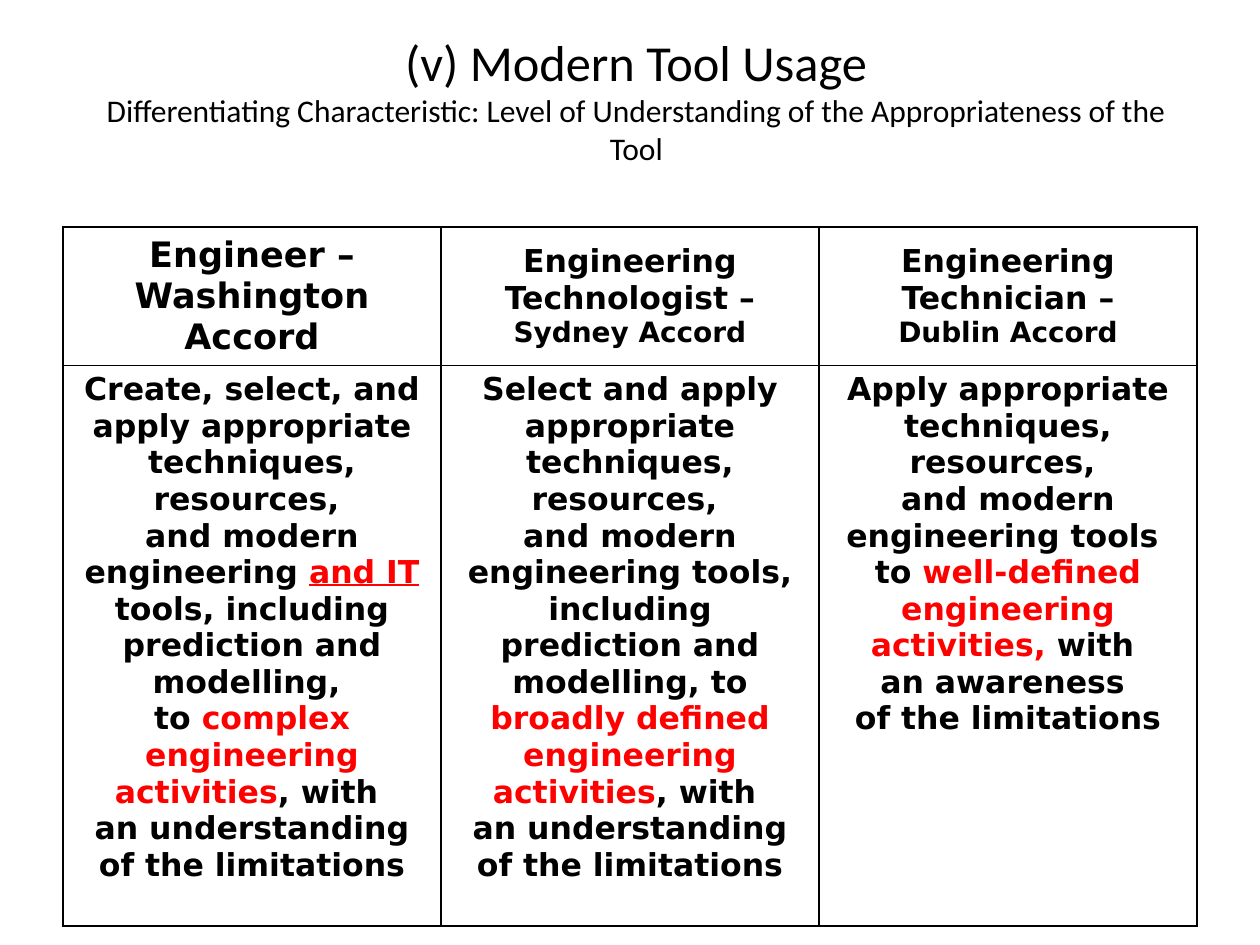
import copy
import dataclasses

import pptx
import pptx.dml.color
import pptx.enum.text
import pptx.oxml
import pptx.oxml.ns
import pptx.util


@dataclasses.dataclass(frozen=True)
class Theme:
    """Colours, fonts and type sizes of the slide."""
    ink: str = "000000"
    accent: str = "FF0000"
    paper: str = "FFFFFF"
    title_font: str = "Calibri"
    table_font: str = "DejaVu Sans"
    title: float = 28.8
    large: float = 20
    body: float = 18
    small: float = 16
    border: float = 1


THEME = Theme()
WIDTH, HEIGHT = 10, 7.5
ROWS = (1.1, 4.45)
COLUMNS = 3
ANCHOR = pptx.enum.text.MSO_ANCHOR

HEADERS = (
    (("Engineer –", THEME.large), ("Washington Accord", THEME.large)),
    (("Engineering Technologist –", THEME.body), ("Sydney Accord", THEME.small)),
    (("Engineering Technician –", THEME.body), ("Dublin Accord", THEME.small)),
)
ACCENT = {"color": THEME.accent}
OUTCOMES = (
    (
        ("Create, select, and apply appropriate techniques, resources, \nand modern engineering ", {}),
        ("and IT", {"color": THEME.accent, "underline": True}),
        (" tools, including prediction and modelling, \nto ", {}),
        ("complex engineering activities", ACCENT),
        (", with \nan understanding of the limitations", {}),
    ),
    (
        ("Select and apply appropriate techniques, resources, \nand modern engineering tools, "
         "including prediction and modelling, to ", {}),
        ("broadly defined engineering activities", ACCENT),
        (", with \nan understanding of the limitations", {}),
    ),
    (
        ("Apply appropriate techniques, resources, \nand modern engineering tools \nto ", {}),
        ("well-defined engineering activities, ", ACCENT),
        ("with \nan awareness \nof the limitations", {}),
    ),
)


def add_text(p, text, size, font, bold=False, color=THEME.ink, underline=None):
    """Add styled text to a centred paragraph, with line breaks of the same size."""
    p.alignment = pptx.enum.text.PP_ALIGN.CENTER
    for i, line in enumerate(text.split("\n")):
        if i:
            p.add_line_break()
            p._p[-1].append(copy.deepcopy(r._r.rPr))
        if line:
            r = p.add_run()
            r.text = line
            r.font.name = font
            r.font.size = pptx.util.Pt(size)
            r.font.bold = bold
            r.font.underline = underline
            r.font.color.rgb = pptx.dml.color.RGBColor.from_string(color)


def add_title(s):
    """Fill the title placeholder with the heading and its subtitle."""
    sp = s.shapes.title
    sp.left, sp.width = (pptx.util.Inches(WIDTH * share) for share in (0.055, 0.9))
    sp.top, sp.height = pptx.util.Inches(0.16), pptx.util.Inches(HEIGHT / 6)
    tf = sp.text_frame
    tf.word_wrap = True
    tf.auto_size = pptx.enum.text.MSO_AUTO_SIZE.NONE
    tf.vertical_anchor = ANCHOR.MIDDLE
    p = tf.paragraphs[0]
    add_text(p, "(v) Modern Tool Usage\n", THEME.title, THEME.title_font)
    add_text(p, "Differentiating Characteristic: Level of Understanding of the "
                "Appropriateness of the Tool", THEME.body, THEME.title_font)


def format_cell(cell, anchor):
    """Give a cell its borders, fill and vertical anchor."""
    cell.vertical_anchor = anchor
    tc_pr = cell._tc.get_or_add_tcPr()
    for side in "LRTB":
        tc_pr.append(pptx.oxml.parse_xml(
            f'<a:ln{side} {pptx.oxml.ns.nsdecls("a")} w="{pptx.util.Pt(THEME.border)}">'
            f'<a:solidFill><a:srgbClr val="{THEME.ink}"/></a:solidFill></a:ln{side}>'))
    cell.fill.solid()
    cell.fill.fore_color.rgb = pptx.dml.color.RGBColor.from_string(THEME.paper)


def fill_header(cell, lines):
    """Write a column heading, one paragraph a line."""
    format_cell(cell, ANCHOR.MIDDLE)
    tf = cell.text_frame
    for i, (text, size) in enumerate(lines):
        p = tf.add_paragraph() if i else tf.paragraphs[0]
        add_text(p, text, size, THEME.table_font, bold=True)


def fill_outcome(cell, parts):
    """Write an outcome made of differently coloured parts."""
    format_cell(cell, ANCHOR.TOP)
    for text, style in parts:
        add_text(cell.text_frame.paragraphs[0], text, THEME.body, THEME.table_font,
                 bold=True, **style)


def add_outcome_table(s):
    """Add the table that compares the three accords."""
    margin = WIDTH / 20
    box = (margin, 1.8, WIDTH - 2 * margin, sum(ROWS))
    table = s.shapes.add_table(len(ROWS), COLUMNS, *map(pptx.util.Inches, box)).table
    for row, height in zip(table.rows, ROWS):
        row.height = pptx.util.Inches(height)
    for col, (header, outcome) in enumerate(zip(HEADERS, OUTCOMES)):
        fill_header(table.cell(0, col), header)
        fill_outcome(table.cell(1, col), outcome)


def main():
    """Build the slide and save it."""
    prs = pptx.Presentation()
    prs.slide_width = pptx.util.Inches(WIDTH)
    prs.slide_height = pptx.util.Inches(HEIGHT)
    s = prs.slides.add_slide(prs.slide_layouts.get_by_name("Title Only"))
    add_title(s)
    add_outcome_table(s)
    prs.save("out.pptx")


if __name__ == "__main__":
    main()
